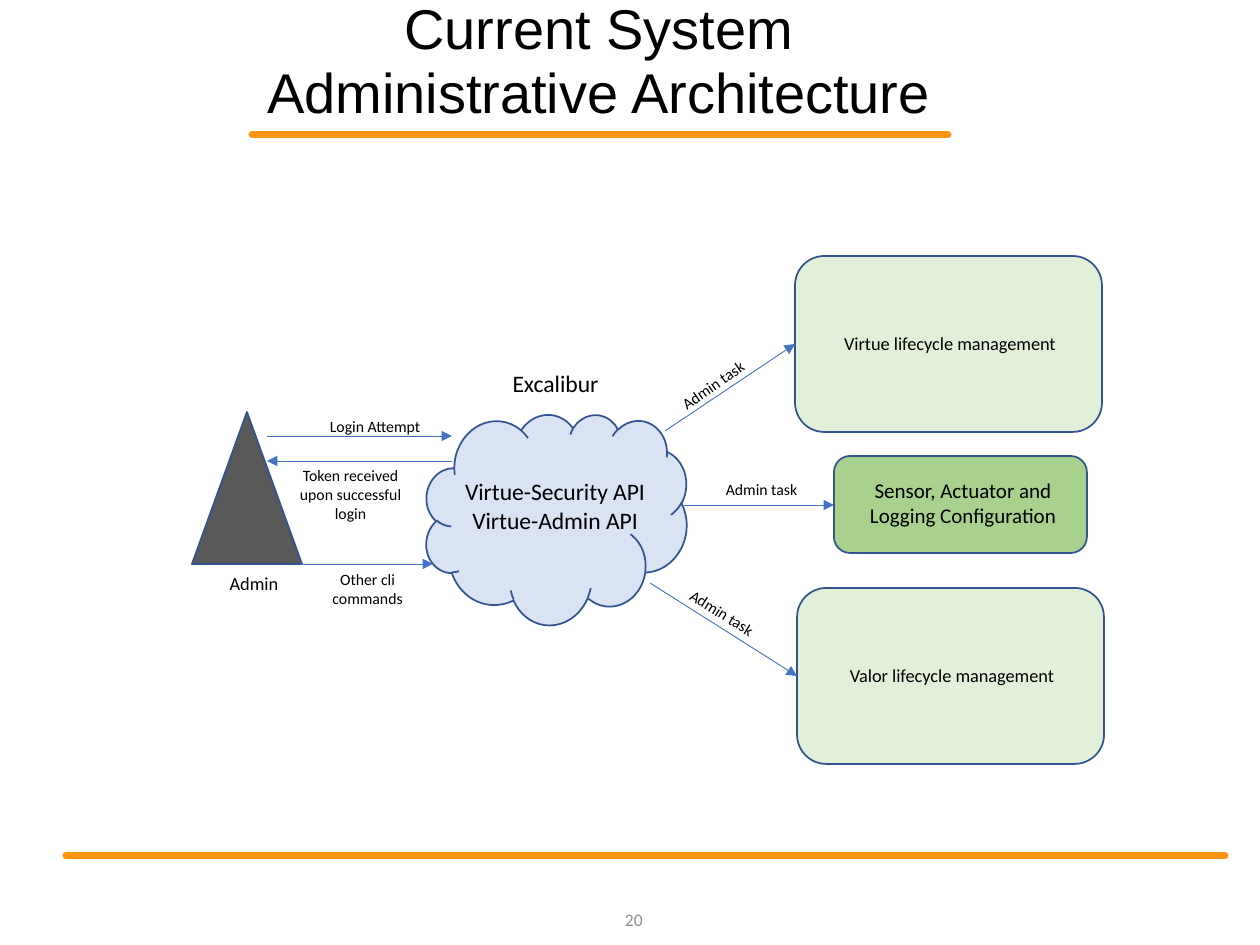
import pptx
import pptx.dml.color
import pptx.enum.shapes
import pptx.enum.text
import pptx.oxml
import pptx.oxml.ns
import pptx.util

SHAPE = pptx.enum.shapes.MSO_SHAPE
ALIGN = pptx.enum.text.PP_ALIGN
ANCHOR = pptx.enum.text.MSO_ANCHOR
EMU_PER_PX = 914400 / 126
NAMESPACE = pptx.oxml.ns.nsdecls("a")


def px(length):
    return pptx.util.Emu(round(length * EMU_PER_PX))


def color(value):
    return pptx.dml.color.RGBColor.from_string(value)


def write(frame, text, size=9, font="Calibri", ink="000000", align=ALIGN.CENTER, spacing=None):
    for index, line in enumerate(text.split("\n")):
        para = frame.paragraphs[0] if index == 0 else frame.add_paragraph()
        para.alignment = align
        if spacing:
            para.line_spacing = spacing
        span = para.add_run()
        span.text = line
        span.font.size = pptx.util.Pt(size)
        span.font.name = font
        span.font.color.rgb = color(ink)


class Canvas:
    outline = "325491"
    arrow_color = "4472C4"
    rule_color = "FF950E"

    def __init__(self, page):
        self.page = page

    def shape(self, kind, left, top, width, height, fill, rotation=0):
        shape = self.page.shapes.add_shape(kind, px(left), px(top), px(width), px(height))
        shape.shadow.inherit = False
        shape.fill.solid()
        shape.fill.fore_color.rgb = color(fill)
        shape.line.color.rgb = color(self.outline)
        shape.line.width = pptx.util.Pt(1)
        shape.rotation = rotation

    def text(self, text, left, top, width, height, wrap=True, rotation=0,
             anchor=ANCHOR.TOP, **style):
        box = self.page.shapes.add_textbox(px(left), px(top), px(width), px(height))
        box.rotation = rotation
        box.text_frame.word_wrap = wrap
        box.text_frame.vertical_anchor = anchor
        write(box.text_frame, text, **style)

    def line(self, start, end, ink, width):
        line = self.page.shapes.add_connector(
            pptx.enum.shapes.MSO_CONNECTOR.STRAIGHT, *map(px, start + end))
        line.line.color.rgb = color(ink)
        line.line.width = pptx.util.Pt(width)
        properties = line._element.spPr
        properties.append(pptx.oxml.parse_xml(f"<a:effectLst {NAMESPACE}/>"))
        return line

    def rule(self, left, right, top):
        line = self.line((left, top), (right, top), self.rule_color, 4)
        line.line._get_or_add_ln().set("cap", "rnd")

    def arrow(self, start, end):
        line = self.line(start, end, self.arrow_color, 0.5)
        head = pptx.oxml.parse_xml(f'<a:tailEnd {NAMESPACE} type="triangle"/>')
        line.line._get_or_add_ln().append(head)


def main():
    deck = pptx.Presentation()
    deck.slide_width, deck.slide_height = px(1260), px(945)
    canvas = Canvas(deck.slides.add_slide(deck.slide_layouts[6]))

    canvas.rule(252, 948, 135)
    canvas.rule(66, 1225, 856)
    canvas.text("Current System Administrative Architecture", 252, 19, 694, 113,
                anchor=ANCHOR.BOTTOM, size=32, font="Arial", spacing=0.95)

    canvas.shape(SHAPE.ISOSCELES_TRIANGLE, 192, 412, 110, 152, "595959")
    canvas.text("Admin", 217, 566, 74, 35, wrap=False, size=10.5)

    canvas.shape(SHAPE.CLOUD, 425, 410, 262, 215, "DAE3F3", rotation=7.6)
    canvas.text("Virtue-Security API\nVirtue-Admin API", 451, 471, 208, 71,
                wrap=False, size=13.5)
    canvas.text("Excalibur", 499, 363, 113, 42, wrap=False, size=13.5)

    for label, left, top in (("Virtue lifecycle management", 795, 256),
                             ("Valor lifecycle management", 797, 588)):
        canvas.shape(SHAPE.ROUNDED_RECTANGLE, left, top, 307, 176, "E2F0D9")
        canvas.text(label, left + 34, top + 70, 242, 35, size=10.5)
    canvas.shape(SHAPE.ROUNDED_RECTANGLE, 834, 456, 253, 97, "A9D18E")
    canvas.text("Sensor, Actuator and\nLogging Configuration", 854, 471, 218, 89,
                wrap=False, size=12)

    for start, end in (((267, 436), (452, 436)),
                       ((452, 461), (267, 461)),
                       ((301, 564), (433, 564)),
                       ((665, 431), (795, 344)),
                       ((684, 505), (834, 505)),
                       ((650, 583), (797, 676))):
        canvas.arrow(start, end)

    for label, left, top, width, height in (
            ("Login Attempt", 316, 411, 118, 32),
            ("Token received\nupon successful\nlogin", 287, 460, 127, 71),
            ("Other cli\ncommands", 319, 564, 97, 50)):
        canvas.text(label, left, top, width, height, wrap=False)
    for left, top, width, rotation in ((660, 369, 106, 325.1),
                                       (670, 474, 183, 0),
                                       (655, 597, 134, 32)):
        canvas.text("Admin task", left, top, width, 32, rotation=rotation)

    canvas.text("20", 605, 895, 50, 50, anchor=ANCHOR.MIDDLE, size=10,
                ink="8C8C8C", align=ALIGN.RIGHT)
    deck.save("out.pptx")


if __name__ == "__main__":
    main()
